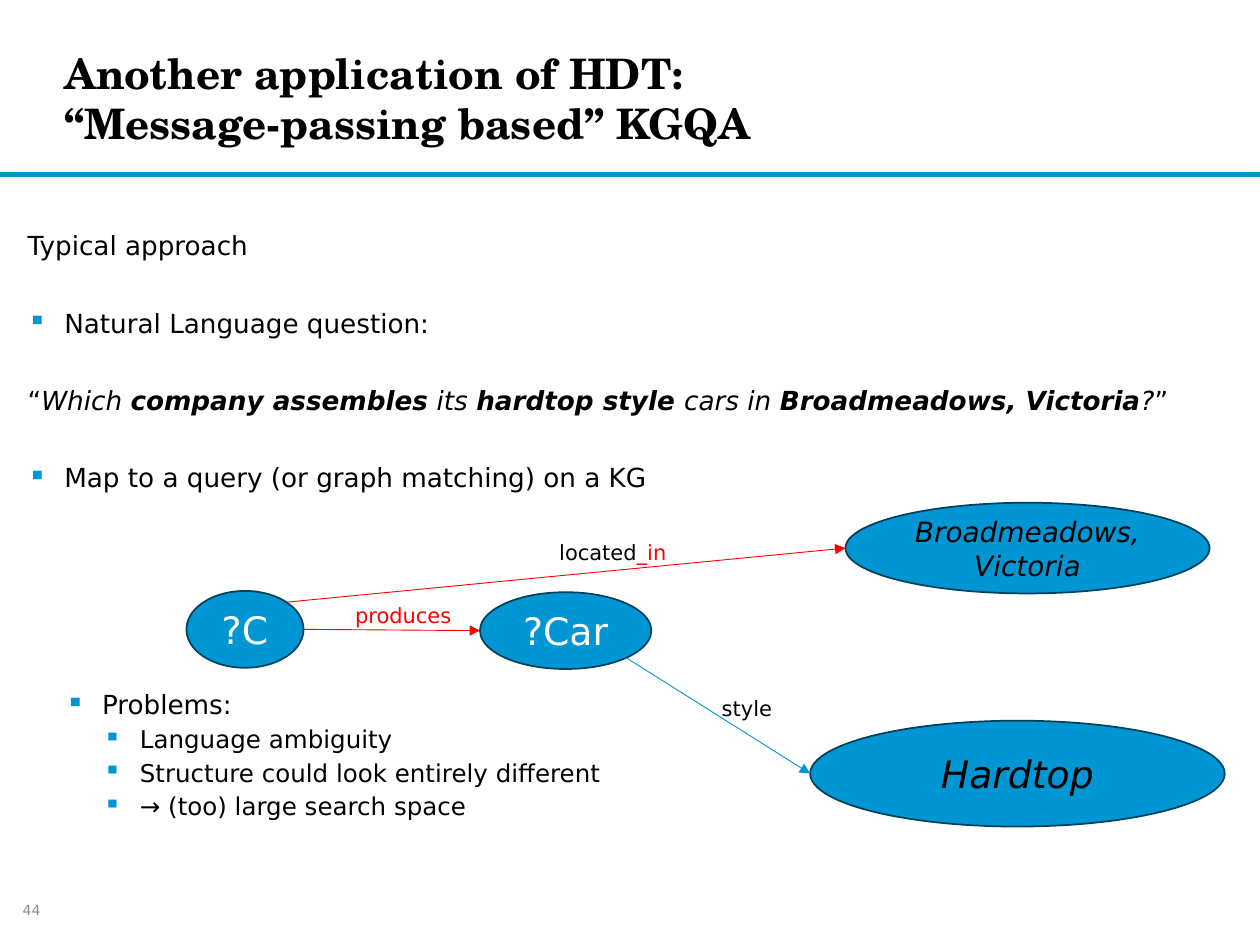
from lxml.etree import SubElement
from pptx import Presentation
from pptx.dml.color import RGBColor
from pptx.enum.shapes import MSO_CONNECTOR, MSO_SHAPE
from pptx.enum.text import MSO_ANCHOR, MSO_AUTO_SIZE, PP_ALIGN
from pptx.oxml.ns import qn
from pptx.util import Inches, Pt

SANS, SERIF = "DejaVu Sans", "TeX Gyre Schola"
BLACK, WHITE, RED, BLUE = "000000", "FFFFFF", "FF0000", "0096D3"
NAVY, TEAL, GREY = "00425C", "0C94B7", "8C8C8C"


def rgb(color):
    return RGBColor.from_string(color)


def add_run(p, text, size, color=BLACK, font=SANS, bold=False, italic=False):
    r = p.add_run()
    r.text = text
    r.font.name, r.font.size = font, Pt(size)
    r.font.bold, r.font.italic = bold, italic
    r.font.color.rgb = rgb(color)


def set_margins(tf, x, y):
    tf.margin_left = tf.margin_right = Inches(x)
    tf.margin_top = tf.margin_bottom = Inches(y)


def add_shape(slide, kind, box, fill, line):
    sp = slide.shapes.add_shape(kind, *map(Inches, box))
    sp.shadow.inherit = False
    sp.fill.solid()
    sp.fill.fore_color.rgb = rgb(fill)
    sp.line.color.rgb = rgb(line)
    sp.line.width = Pt(1)
    return sp


def add_title(slide, lines):
    sp = slide.shapes.title
    sp.left, sp.top, sp.width, sp.height = map(Inches, (0.51, 0.18, 7.27, 1.19))
    tf = sp.text_frame
    set_margins(tf, 0, 0)
    tf.vertical_anchor = MSO_ANCHOR.MIDDLE
    p = tf.paragraphs[0]
    p.alignment = PP_ALIGN.LEFT
    for i, line in enumerate(lines):
        if i:
            p.add_line_break()
        add_run(p, line, 24, font=SERIF, bold=True)


def add_textbox(slide, box):
    tf = slide.shapes.add_textbox(*map(Inches, box)).text_frame
    tf.word_wrap = True
    set_margins(tf, 0, 0.05)
    return tf


def add_bullet(p, level):
    pPr = p._p.get_or_add_pPr()
    pPr.set("marL", str(Inches(0.29 + 0.3 * level)))
    pPr.set("indent", str(Inches(-0.29)))
    SubElement(SubElement(pPr, qn("a:buClr")), qn("a:srgbClr"), val=BLUE)
    SubElement(pPr, qn("a:buChar"), char="▪")


def add_body(slide, paragraphs):
    """Each paragraph is (bullet level or None, space before, size, runs)."""
    tf = add_textbox(slide, (0.22, 1.8, 9.15, 4.86))
    for i, (level, before, size, runs) in enumerate(paragraphs):
        p = tf.add_paragraph() if i else tf.paragraphs[0]
        p.line_spacing = 0.9
        p.space_before = Pt(before)
        p.space_after = Pt(4 if level else 6)
        if level is not None:
            add_bullet(p, level)
        for text, style in runs:
            add_run(p, text, size, bold="b" in style, italic="i" in style)


def add_node(slide, box, text, color=WHITE, size=21.6, italic=False):
    sp = add_shape(slide, MSO_SHAPE.OVAL, box, BLUE, NAVY)
    tf = sp.text_frame
    tf.word_wrap = True
    tf.vertical_anchor = MSO_ANCHOR.MIDDLE
    p = tf.paragraphs[0]
    p.alignment = PP_ALIGN.CENTER
    add_run(p, text, size, color, italic=italic)
    return sp


def rim(node, dx, dy):
    """Point on an ellipse's outline in the unit direction (dx, dy)."""
    return (int(node.left + node.width * (1 + dx) / 2),
            int(node.top + node.height * (1 + dy) / 2))


def add_arrow(slide, start, end, color):
    cxn = slide.shapes.add_connector(MSO_CONNECTOR.STRAIGHT, *start, *end)
    cxn.line.color.rgb = rgb(color)
    cxn.line.width = Pt(0.5)
    SubElement(cxn.line._get_or_add_ln(), qn("a:tailEnd"), type="triangle")
    SubElement(cxn._element.spPr, qn("a:effectLst"))


def add_label(slide, left, top, width, runs):
    tf = slide.shapes.add_textbox(*map(Inches, (left, top, width, 0.3))).text_frame
    tf.word_wrap = False
    tf.auto_size = MSO_AUTO_SIZE.SHAPE_TO_FIT_TEXT
    for text, color in runs:
        add_run(tf.paragraphs[0], text, 12, color)


def add_graph(slide):
    company = add_node(slide, (1.48, 4.69, 0.93, 0.61), "?C")
    car = add_node(slide, (3.81, 4.7, 1.36, 0.61), "?Car")
    place = add_node(slide, (6.71, 3.99, 2.89, 0.72), "Broadmeadows, Victoria",
                     BLACK, 16, italic=True)
    hardtop = add_node(slide, (6.43, 5.72, 3.29, 0.84), "Hardtop", BLACK, italic=True)

    diagonal = 0.5 ** 0.5
    add_arrow(slide, rim(company, 1, 0), rim(car, -1, 0), RED)
    add_arrow(slide, rim(company, diagonal, -diagonal), rim(place, -1, 0), RED)
    add_arrow(slide, rim(car, diagonal, diagonal), rim(hardtop, -1, 0), BLUE)

    add_label(slide, 4.34, 4.23, 1.07, [("located", BLACK), ("_in", RED)])
    add_label(slide, 2.72, 4.73, 0.97, [("produces", RED)])
    add_label(slide, 5.63, 5.47, 0.6, [("style", BLACK)])


def add_slide_number(slide, number):
    tf = add_textbox(slide, (0.18, 7.05, 3.52, 0.34))
    tf.vertical_anchor = MSO_ANCHOR.MIDDLE
    add_run(tf.paragraphs[0], number, 8, GREY)


def main():
    prs = Presentation()
    prs.slide_width, prs.slide_height = Inches(10), Inches(7.5)
    slide = prs.slides.add_slide(prs.slide_layouts[5])

    add_shape(slide, MSO_SHAPE.RECTANGLE, (0, 1.37, 10, 0.03), TEAL, BLUE)
    add_title(slide, ["Another application of HDT: ", "“Message-passing based” KGQA"])

    question = [("“", ""), ("Which ", "i"), ("company assembles", "bi"), (" its ", "i"),
                ("hardtop style ", "bi"), ("cars in ", "i"),
                ("Broadmeadows, Victoria", "bi"), ("?", "i"), ("”", "")]
    gap, graph_gap = 22, 107.5
    add_body(slide, [
        (None, 0, 15, [("Typical approach", "")]),
        (0, gap, 15, [("Natural Language question:", "")]),
        (None, gap, 15, question),
        (0, gap, 15, [("Map to a query (or graph matching) on a KG", "")]),
        (1, graph_gap, 15, [("Problems:", "")]),
        (2, 0, 14, [("Language ambiguity", "")]),
        (2, 0, 14, [("Structure could look entirely different", "")]),
        (2, 0, 14, [("→ (too) large search space", "")]),
    ])
    add_graph(slide)
    add_slide_number(slide, "44")
    prs.save("out.pptx")


if __name__ == "__main__":
    main()
